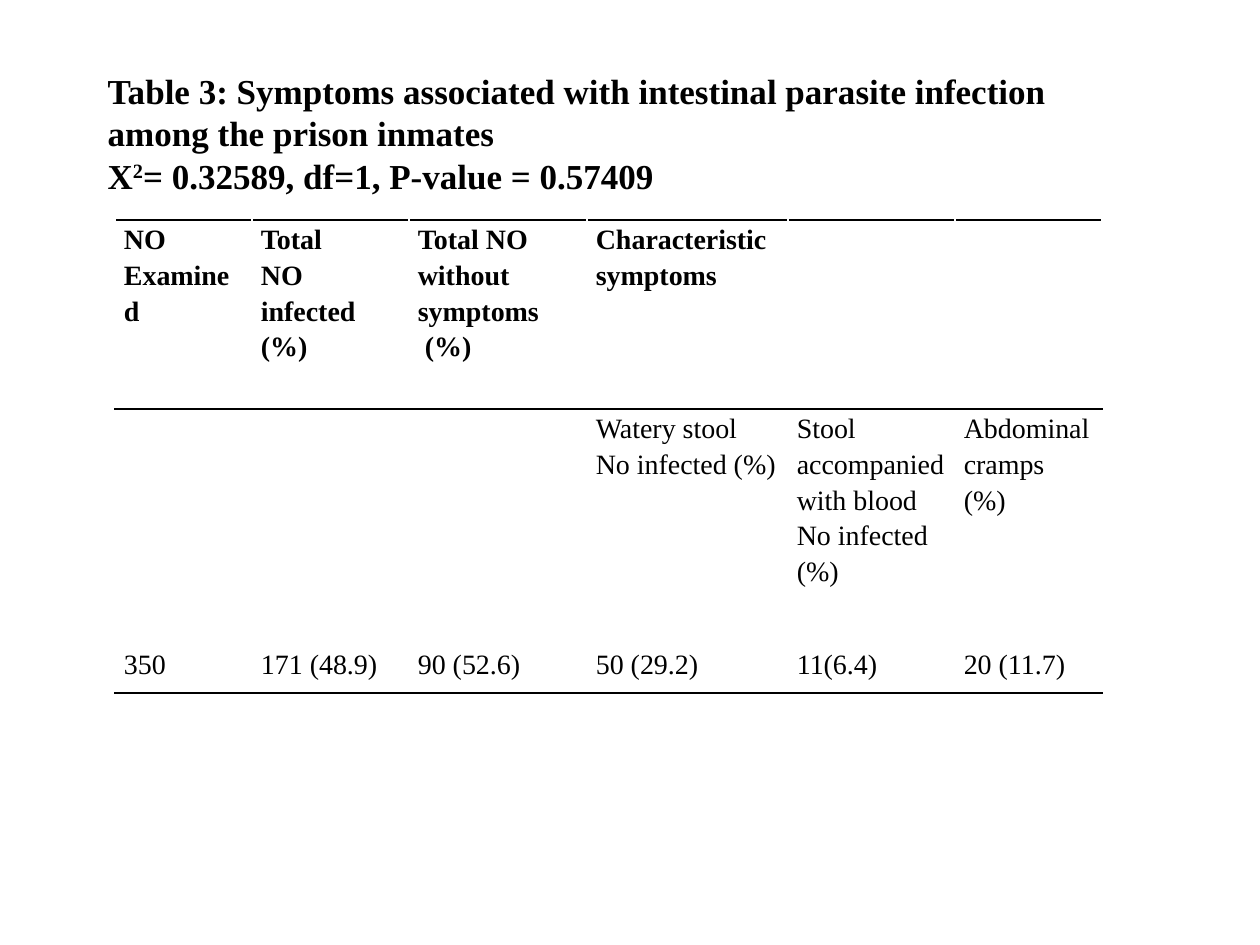
from pptx import Presentation
from pptx.dml.color import RGBColor
from pptx.enum.text import MSO_ANCHOR as Anchor, MSO_AUTO_SIZE as AutoSize, PP_ALIGN as Align
from pptx.oxml import parse_xml
from pptx.oxml.ns import nsdecls
from pptx.util import Pt

# Content: title lines as (text, superscript) runs; table cells as paragraphs
TITLE = [
    [("Table 3: Symptoms associated with intestinal parasite infection among the prison inmates", False)],
    [("X", False), ("2", True), ("= 0.32589, df=1, P-value = 0.57409", False)],
]
ROWS = [
    [["NO", "Examined"], ["Total ", "NO infected (%)"],
     ["Total NO without symptoms", " (%)"], ["Characteristic symptoms"], [], []],
    [[], [], [], ["Watery stool", "No infected (%)"],
     ["Stool accompanied with blood", "No infected (%)"], ["Abdominal cramps (%)"]],
    [["350"], ["171 (48.9)"], ["90 (52.6)"], ["50 (29.2)"], ["11(6.4)"], ["20 (11.7)"]],
]
JUSTIFIED = (0, 1)  # row, column

# Layout in px, 126 to the inch
TITLE_BOX = (95, 63, 1050, 140)
TABLE_AT = (115, 220)
COL_WIDTHS = (137, 157, 178, 201, 167, 147)
ROW_HEIGHTS = (189, 236, 48)
CELL_MARGINS = {"margin_left": 9, "margin_right": 9, "margin_top": 0, "margin_bottom": 0}
RULES = {0: ("lnT", "lnB"), 1: ("lnT",), 2: ("lnB",)}  # ruled edges of each row

THEME = {"font": "Times New Roman", "ink": "000000", "title": 20, "cell": 16,
         "spacing": 1.15, "rule": 1}


def px(n):
    return round(n * 914400 / 126)


def add_run(p, text, size, bold):
    r = p.add_run()
    r.text = text
    for name, value in {"name": THEME["font"], "size": Pt(size), "bold": bold}.items():
        setattr(r.font, name, value)
    r.font.color.rgb = RGBColor.from_string(THEME["ink"])
    return r


def add_rule(cell, edge):
    cell._tc.get_or_add_tcPr().append(parse_xml(
        f'<a:{edge} {nsdecls("a")} w="{Pt(THEME["rule"])}"><a:solidFill>'
        f'<a:srgbClr val="{THEME["ink"]}"/></a:solidFill></a:{edge}>'))


def add_title(slide):
    sp = slide.shapes.title
    sp.left, sp.top, sp.width, sp.height = map(px, TITLE_BOX)
    tf = sp.text_frame
    for name, value in {"word_wrap": True, "auto_size": AutoSize.NONE,
                        "vertical_anchor": Anchor.MIDDLE}.items():
        setattr(tf, name, value)
    for i, line in enumerate(TITLE):
        p = tf.add_paragraph() if i else tf.paragraphs[0]
        p.alignment = Align.LEFT
        for text, raised in line:
            r = add_run(p, text, THEME["title"], True)
            if raised:
                r.font._element.set("baseline", "30000")


def fill_cell(cell, lines, bold, align):
    for name, value in CELL_MARGINS.items():
        setattr(cell, name, px(value))
    tf = cell.text_frame
    for i, line in enumerate(lines):
        p = tf.add_paragraph() if i else tf.paragraphs[0]
        p.alignment, p.line_spacing = align, THEME["spacing"]
        add_run(p, line, THEME["cell"], bold)


def add_symptom_table(slide):
    size = sum(COL_WIDTHS), sum(ROW_HEIGHTS)
    table = slide.shapes.add_table(len(ROWS), len(COL_WIDTHS), *map(px, TABLE_AT + size)).table
    table.first_row = table.horz_banding = False
    for col, width in zip(table.columns, COL_WIDTHS):
        col.width = px(width)
    for r, (row, height) in enumerate(zip(ROWS, ROW_HEIGHTS)):
        table.rows[r].height = px(height)
        for c, lines in enumerate(row):
            cell = table.cell(r, c)
            align = Align.JUSTIFY if (r, c) == JUSTIFIED else Align.LEFT
            fill_cell(cell, lines, r == 0, align)
            for edge in RULES[r]:
                add_rule(cell, edge)
            cell.fill.background()


def main():
    prs = Presentation()
    prs.slide_width, prs.slide_height = px(1260), px(945)
    slide = prs.slides.add_slide(prs.slide_layouts[5])  # title only
    add_title(slide)
    add_symptom_table(slide)
    prs.save("out.pptx")


if __name__ == "__main__":
    main()
